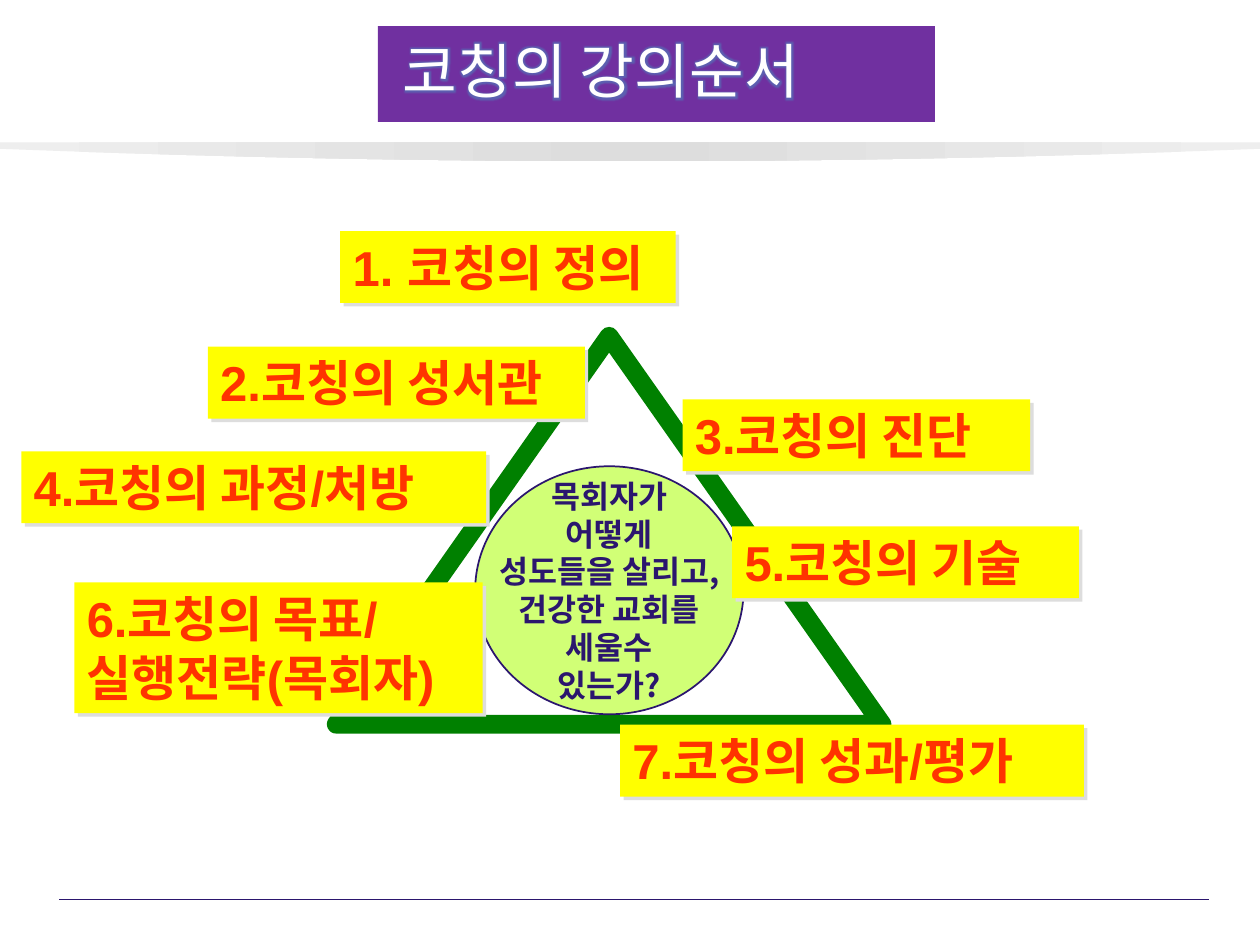
from copy import deepcopy

from lxml.etree import SubElement
from pptx import Presentation
from pptx.dml.color import RGBColor
from pptx.enum.shapes import MSO_CONNECTOR, MSO_SHAPE
from pptx.enum.text import MSO_ANCHOR, MSO_AUTO_SIZE, PP_ALIGN
from pptx.oxml.ns import qn
from pptx.util import Cm, Pt

WHITE = RGBColor(0xFF, 0xFF, 0xFF)
LIGHT_GREY = RGBColor(0xEE, 0xEE, 0xEE)
GREY = RGBColor(0xDD, 0xDD, 0xDD)
NAVY = RGBColor(0x2B, 0x16, 0x6E)
GREEN = RGBColor(0x00, 0x80, 0x00)
LIME = RGBColor(0xCC, 0xFF, 0x66)
YELLOW = RGBColor(0xFF, 0xFF, 0x00)
RED = RGBColor(0xFF, 0x33, 0x00)
PURPLE = RGBColor(0x70, 0x30, 0xA0)
GLOW = RGBColor(0x4F, 0x81, 0xBD)
LATIN_FONT = "Arial"
KOREAN_FONT = "Noto Sans CJK KR"


def add_color(parent, color, alpha=None):
    tint = SubElement(parent, qn("a:srgbClr"), val=str(color))
    if alpha is not None:
        SubElement(tint, qn("a:alpha"), val=str(alpha * 1000))


class SlideBuilder:
    def __init__(self, slide):
        self.slide = slide
        self.shapes = slide.shapes

    def shape(self, kind, box, fill=None, line=None, width=1):
        item = self.shapes.add_shape(kind, *map(Cm, box))
        item.shadow.inherit = False
        if fill is None:
            item.fill.background()
        else:
            item.fill.solid()
            item.fill.fore_color.rgb = fill
        if line is None:
            item.line.fill.background()
        else:
            item.line.color.rgb = line
            item.line.width = Pt(width)
        return item

    def text(self, item, lines, size, color, font, bold=False,
             align=PP_ALIGN.LEFT, anchor=MSO_ANCHOR.TOP, wrap=False):
        frame = item.text_frame
        frame.word_wrap = wrap
        frame.vertical_anchor = anchor
        frame.text = "\n".join(lines)
        for paragraph in frame.paragraphs:
            paragraph.alignment = align
            paragraph.font.size = Pt(size)
            paragraph.font.bold = bold
            paragraph.font.name = font
            paragraph.font.color.rgb = color
        return frame

    def title(self, heading, box):
        banner = self.shape(MSO_SHAPE.RECTANGLE, box, PURPLE)
        frame = self.text(banner, [heading], 34, WHITE, KOREAN_FONT,
                          anchor=MSO_ANCHOR.MIDDLE, wrap=True)
        frame.margin_left = Cm(0.5)
        paragraph = frame.paragraphs[0]
        paragraph.line_spacing = 0.9
        # Soft glow around the letters
        props = paragraph.runs[0].font._element
        effects = SubElement(props, qn("a:effectLst"))
        add_color(SubElement(effects, qn("a:glow"), rad=str(Pt(5))), GLOW, 60)

    def label(self, lines, box):
        card = self.shape(MSO_SHAPE.RECTANGLE, box, YELLOW)
        effects = card._element.spPr.find(qn("a:effectLst"))
        shadow = SubElement(effects, qn("a:outerShdw"), dist=str(Pt(2.8)),
                            dir="2700000", algn="ctr", rotWithShape="0")
        add_color(shadow, GREY)
        frame = self.text(card, lines, 28, RED, LATIN_FONT, bold=True)
        frame.auto_size = MSO_AUTO_SIZE.SHAPE_TO_FIT_TEXT

    def question(self, lines, box):
        circle = self.shape(MSO_SHAPE.OVAL, box, LIME, NAVY)
        tint = circle._element.spPr.find(qn("a:solidFill"))[0]
        SubElement(tint, qn("a:alpha"), val="89000")
        self.text(circle, lines, 18, NAVY, KOREAN_FONT, bold=True,
                  align=PP_ALIGN.CENTER, anchor=MSO_ANCHOR.MIDDLE)

    def curved_band(self, width, top, edge, sag, steps=40):
        outline = self.shapes.build_freeform(0, Cm(top))
        curve = [(Cm(width * i / steps),
                  Cm(edge + 4 * sag * i / steps * (1 - i / steps)))
                 for i in range(steps + 1)]
        outline.add_line_segments(curve + [(Cm(width), Cm(top))], close=True)
        band = outline.convert_to_shape()
        band.shadow.inherit = False
        band.line.fill.background()
        band.fill.gradient()
        band.fill.gradient_angle = 0
        first = band._element.spPr.find(".//" + qn("a:gs"))
        first.addnext(deepcopy(first))
        stops = zip(band.fill.gradient_stops, (0, 0.5, 1),
                    (LIGHT_GREY, GREY, LIGHT_GREY))
        for stop, position, color in stops:
            stop.position = position
            stop.color.rgb = color

    def rule(self, left, right, y):
        line = self.shapes.add_connector(MSO_CONNECTOR.STRAIGHT,
                                         Cm(left), Cm(y), Cm(right), Cm(y))
        line.line.color.rgb = NAVY
        line.line.width = Pt(0.75)
        SubElement(line._element.spPr, qn("a:effectLst"))


def main():
    deck = Presentation()
    deck.slide_width, deck.slide_height = Cm(25.4), Cm(19.05)
    builder = SlideBuilder(deck.slides.add_slide(deck.slide_layouts[6]))

    # Page decoration
    builder.curved_band(25.4, top=2.87, edge=3, sag=0.25)
    builder.rule(1.19, 24.38, 18.13)

    # Title
    builder.title("코칭의 강의순서", (7.62, 0.53, 11.23, 1.93))

    # Triangle with the central question
    builder.shape(MSO_SHAPE.FLOWCHART_EXTRACT, (6.78, 6.78, 11, 7.82),
                  line=GREEN, width=10.75)
    builder.question(["목회자가", "어떻게", "성도들을 살리고,", "건강한 교회를",
                      "세울수", "있는가?"], (9.58, 9.4, 5.41, 5))

    # Lecture steps: lines, left, top, width
    steps = [
        (["1. 코칭의 정의"], 6.86, 4.66, 6.76),
        (["2.코칭의 성서관"], 4.19, 6.99, 7.6),
        (["3.코칭의 진단"], 13.76, 8.05, 7.01),
        (["4.코칭의 과정/처방"], 0.43, 9.1, 9.37),
        (["5.코칭의 기술"], 14.76, 10.61, 6.99),
        (["6.코칭의 목표/", "실행전략(목회자)"], 1.5, 11.74, 8.23),
        (["7.코칭의 성과/평가"], 12.5, 14.61, 9.35),
    ]
    for lines, left, top, width in steps:
        height = 1.45 + 1.19 * (len(lines) - 1)
        builder.label(lines, (left, top, width, height))

    deck.save("out.pptx")


if __name__ == "__main__":
    main()
